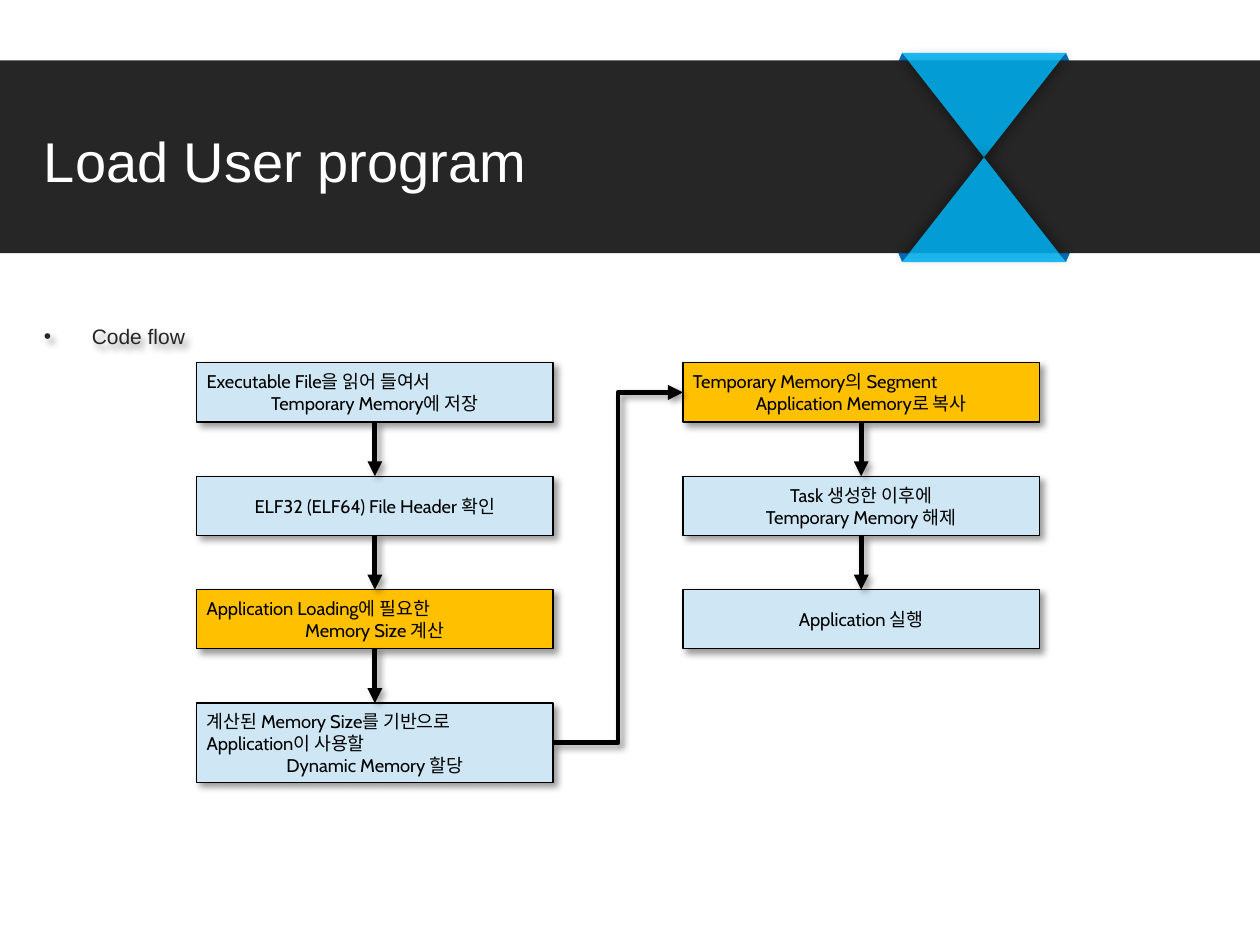
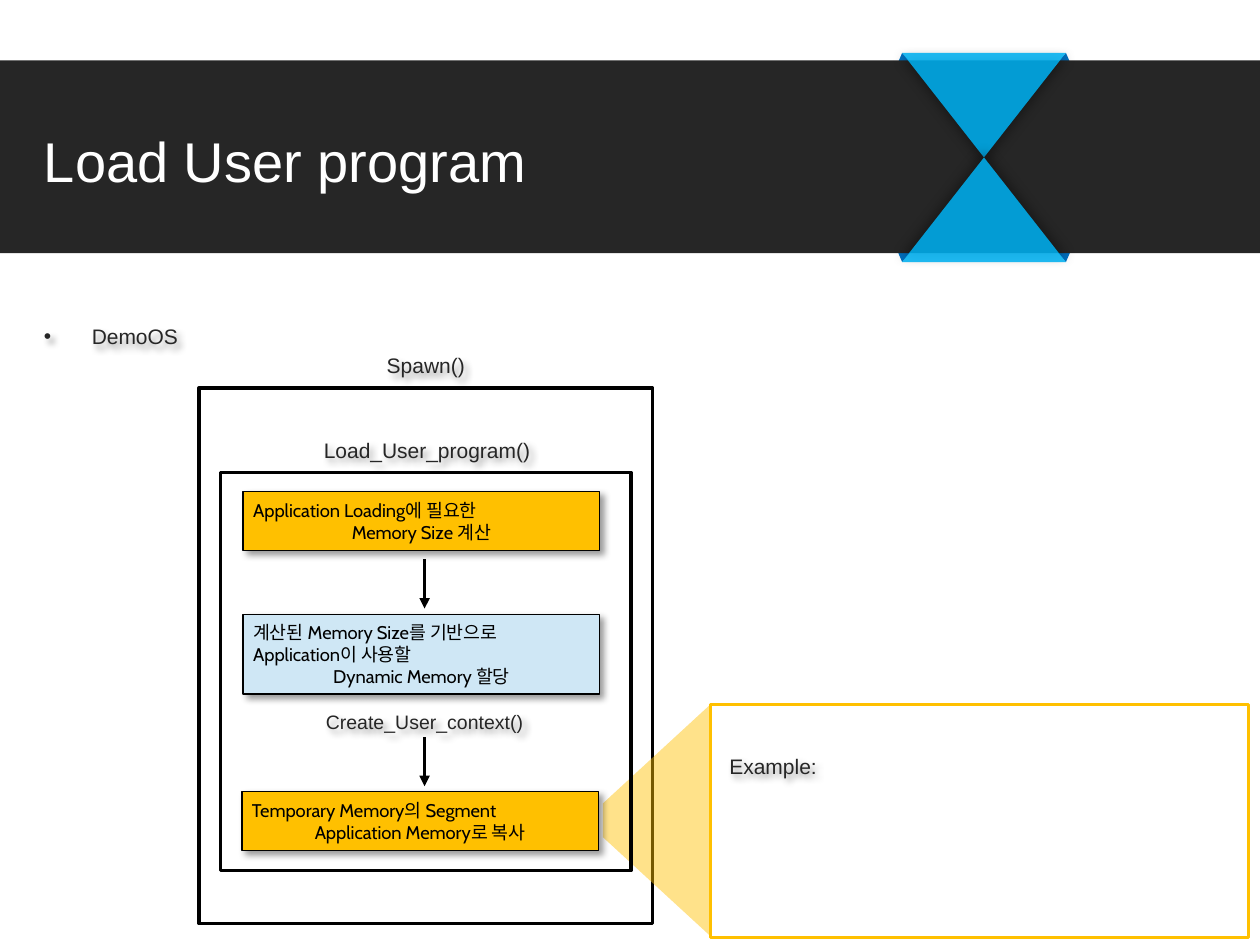
from lxml import etree
from pptx import Presentation
from pptx import util as u
from pptx.dml.color import RGBColor
from pptx.enum import shapes, text
from pptx.oxml import ns, parse_xml

WHITE = RGBColor(0xFF, 0xFF, 0xFF)
BLACK = RGBColor(0, 0, 0)
CHARCOAL = RGBColor(0x26, 0x26, 0x26)
SKY = RGBColor(0x00, 0xB0, 0xF0)
DEEP_BLUE = RGBColor(0x00, 0x70, 0xC0)
PALE_BLUE = RGBColor(0xCF, 0xE7, 0xF5)
AMBER = RGBColor(0xFF, 0xC0, 0x00)

LEFT, CENTER = text.PP_ALIGN.LEFT, text.PP_ALIGN.CENTER
RECTANGLE = shapes.MSO_SHAPE.RECTANGLE
TRIANGLE = shapes.MSO_SHAPE.ISOSCELES_TRIANGLE
SHADOW = '''<a:effectLst %s><a:outerShdw blurRad="%d" dist="%d" dir="%d" algn="ctr" rotWithShape="0">
<a:srgbClr val="000000"><a:alpha val="40000"/></a:srgbClr></a:outerShdw></a:effectLst>'''
SOFT_SHADOW = (4, 3, 45)

# Each step: fill, lines, alignment of every line before the last
LOAD_FILE = (PALE_BLUE, ["Executable File을 읽어 들여서", "Temporary Memory에 저장"], LEFT)
CHECK_HEADER = (PALE_BLUE, ["ELF32 (ELF64) File Header 확인"], CENTER)
MEASURE = (AMBER, ["Application Loading에 필요한", "Memory Size 계산"], LEFT)
ALLOCATE = (PALE_BLUE, ["계산된 Memory Size를 기반으로", "Application이 사용할",
                        "Dynamic Memory 할당"], LEFT)
COPY_SEGMENT = (AMBER, ["Temporary Memory의 Segment", "Application Memory로 복사"], LEFT)
CREATE_TASK = (PALE_BLUE, ["Task 생성한 이후에", "Temporary Memory 해제"], CENTER)
RUN = (PALE_BLUE, ["Application 실행"], CENTER)


def style(shape, fill=None, line=None, width=0.75, alpha=100, shadow=None, arrow=False):
    """Set fill, outline, arrowhead and shadow (blur, distance, angle) of a shape or connector."""
    properties = shape._element.spPr
    if fill is not None:
        shape.fill.solid()
        shape.fill.fore_color.rgb = fill
        if alpha < 100:
            color = properties.find(ns.qn("a:solidFill"))[0]
            etree.SubElement(color, ns.qn("a:alpha"), val=str(alpha * 1000))
    elif hasattr(shape, "fill"):
        shape.fill.background()
    if line is not None:
        shape.line.color.rgb = line
        shape.line.width = u.Pt(width)
    else:
        shape.line.fill.background()
    if arrow:
        etree.SubElement(properties.find(ns.qn("a:ln")), ns.qn("a:tailEnd"), type="triangle")
    if shadow:
        blur, distance, angle = shadow
        values = (ns.nsdecls("a"), u.Pt(blur), u.Pt(distance), angle * 60000)
        properties.append(parse_xml(SHADOW % values))
    else:
        etree.SubElement(properties, ns.qn("a:effectLst"))


def write(shape, lines, alignments, size, color, font="Arial", spacing=None,
          anchor=text.MSO_ANCHOR.TOP):
    """Put one paragraph per line into the shape."""
    frame = shape.text_frame
    frame.word_wrap = True
    frame.vertical_anchor = anchor
    frame.text = "\n".join(lines)
    for paragraph, alignment in zip(frame.paragraphs, alignments):
        paragraph.alignment = alignment
        if spacing:
            paragraph.line_spacing = spacing
            paragraph.space_before = u.Pt(size * 0.2)
        run = paragraph.runs[0]
        for name, value in {"name": font, "size": u.Pt(size)}.items():
            setattr(run.font, name, value)
        run.font.color.rgb = color


presentation = Presentation()
presentation.slide_width, presentation.slide_height = u.Inches(10), u.Inches(7.5)
flow_slide, spawn_slide = [presentation.slides.add_slide(presentation.slide_layouts[6])
                           for _ in range(2)]

# Band, ribbon, title and bullet on both slides
RIBBON_X, RIBBON_Y = 7.81, 1.25
for slide, topic in ((flow_slide, "Code flow"), (spawn_slide, "DemoOS")):
    for x_side in (-1, 1):
        for y_side in (-1, 1):
            corners = [(u.Inches(RIBBON_X + x_side * x), u.Inches(RIBBON_Y + y_side * y))
                       for x, y in ((0.65, 0.83), (0.68, 0.76), (0.59, 0.76))]
            builder = slide.shapes.build_freeform(*corners[0])
            builder.add_line_segments(corners[1:], close=True)
            style(builder.convert_to_shape(), DEEP_BLUE)
    band = slide.shapes.add_shape(RECTANGLE, 0, u.Inches(0.48), u.Inches(10), u.Inches(1.53))
    style(band, CHARCOAL)
    for top, flip, angle in ((0.42, "1", 90), (RIBBON_Y, "0", 270)):
        triangle = slide.shapes.add_shape(TRIANGLE, u.Inches(7.16), u.Inches(top),
                                          u.Inches(1.3), u.Inches(0.83))
        triangle._element.spPr.xfrm.set("flipV", flip)
        style(triangle, SKY, alpha=87, shadow=(7, 3, angle))

    title = slide.shapes.add_textbox(u.Inches(0.25), u.Inches(0.92), u.Inches(5.92), u.Inches(0.7))
    write(title, ["Load User program"], [LEFT], 32, WHITE, anchor=text.MSO_ANCHOR.MIDDLE)
    bullet = slide.shapes.add_textbox(u.Inches(0.25), u.Inches(2.42),
                                      u.Inches(4.65), u.Inches(0.41))
    style(bullet, shadow=SOFT_SHADOW)
    write(bullet, [topic], [LEFT], 12, CHARCOAL, spacing=1.5)
    bullet_format = bullet.text_frame.paragraphs[0]._p.get_or_add_pPr()
    bullet_format.set("marL", str(u.Inches(0.38)))
    bullet_format.set("indent", str(-u.Inches(0.38)))
    etree.SubElement(bullet_format, ns.qn("a:buFont"), typeface="Arial")
    etree.SubElement(bullet_format, ns.qn("a:buChar"), char="•")

# Frames, callout and labels of the call nesting
for left, top, width, height, color in ((1.58, 3.08, 3.6, 4.25, BLACK),
                                        (5.64, 5.59, 4.27, 1.85, AMBER),
                                        (1.75, 3.75, 3.26, 3.16, BLACK)):
    frame_box = spawn_slide.shapes.add_shape(RECTANGLE, u.Inches(left), u.Inches(top),
                                             u.Inches(width), u.Inches(height))
    style(frame_box, line=color, width=2)
    if left == 1.58:
        callout = spawn_slide.shapes.add_shape(shapes.MSO_SHAPE.TRAPEZOID, u.Inches(4.29),
                                               u.Inches(6.08), u.Inches(1.85), u.Inches(0.86))
        callout.rotation = 270
        callout.adjustments[0] = 0.92
        style(callout, AMBER, alpha=46)

for label, left, top, width, height, size, spacing, alignment in (
        ("Spawn()", 1.58, 2.65, 3.6, 0.41, 12, 1.5, CENTER),
        ("Load_User_program()", 1.77, 3.32, 3.24, 0.41, 12, 1.5, CENTER),
        ("Create_User_context()", 1.94, 5.53, 2.86, 0.36, 11.1, 1.3, CENTER),
        ("Example:", 5.69, 5.85, 1.15, 0.38, 12, 1.4, LEFT)):
    label_box = spawn_slide.shapes.add_textbox(u.Inches(left), u.Inches(top),
                                               u.Inches(width), u.Inches(height))
    style(label_box, shadow=SOFT_SHADOW)
    write(label_box, [label], [alignment], size, CHARCOAL, spacing=spacing)

# Step boxes of both slides
left_column = [(flow_slide, 1.56, 2.88 + 0.9 * row, step)
               for row, step in enumerate((LOAD_FILE, CHECK_HEADER, MEASURE, ALLOCATE))]
right_column = [(flow_slide, 5.42, 2.88 + 0.9 * row, step)
                for row, step in enumerate((COPY_SEGMENT, CREATE_TASK, RUN))]
spawn_steps = [(spawn_slide, 1.93, 3.9, MEASURE), (spawn_slide, 1.93, 4.88, ALLOCATE),
               (spawn_slide, 1.92, 6.28, COPY_SEGMENT)]
flow_boxes = []
for slide, left, top, (fill, lines, alignment) in left_column + right_column + spawn_steps:
    height = 0.63 if len(lines) == 3 else 0.47
    box = slide.shapes.add_shape(RECTANGLE, u.Inches(left), u.Inches(top),
                                 u.Inches(2.83), u.Inches(height))
    style(box, fill, BLACK, shadow=SOFT_SHADOW)
    margins = {"margin_left": 0.08, "margin_right": 0.08, "margin_top": 0.03, "margin_bottom": 0.03}
    for name, value in margins.items():
        setattr(box.text_frame, name, u.Inches(value))
    write(box, lines, [alignment] * (len(lines) - 1) + [CENTER], 10.5, BLACK, "Cabin",
          anchor=text.MSO_ANCHOR.MIDDLE)
    if slide is flow_slide:
        flow_boxes.append(box)

# Arrows: bottom to top inside a column, right to left between columns
TOP_SITE, LEFT_SITE, BOTTOM_SITE, RIGHT_SITE = range(4)
for source, target in zip(flow_boxes, flow_boxes[1:]):
    same_column = source.left == target.left
    connector = flow_slide.shapes.add_connector(shapes.MSO_CONNECTOR.ELBOW, 0, 0, 0, 0)
    connector.begin_connect(source, BOTTOM_SITE if same_column else RIGHT_SITE)
    connector.end_connect(target, TOP_SITE if same_column else LEFT_SITE)
    style(connector, line=BLACK, width=2.83, shadow=SOFT_SHADOW, arrow=True)

for top in (4.44, 5.85):
    connector = spawn_slide.shapes.add_connector(shapes.MSO_CONNECTOR.STRAIGHT, u.Inches(3.37),
                                                 u.Inches(top), u.Inches(3.37), u.Inches(top + 0.39))
    style(connector, line=BLACK, width=2, arrow=True)

presentation.save("out.pptx")
